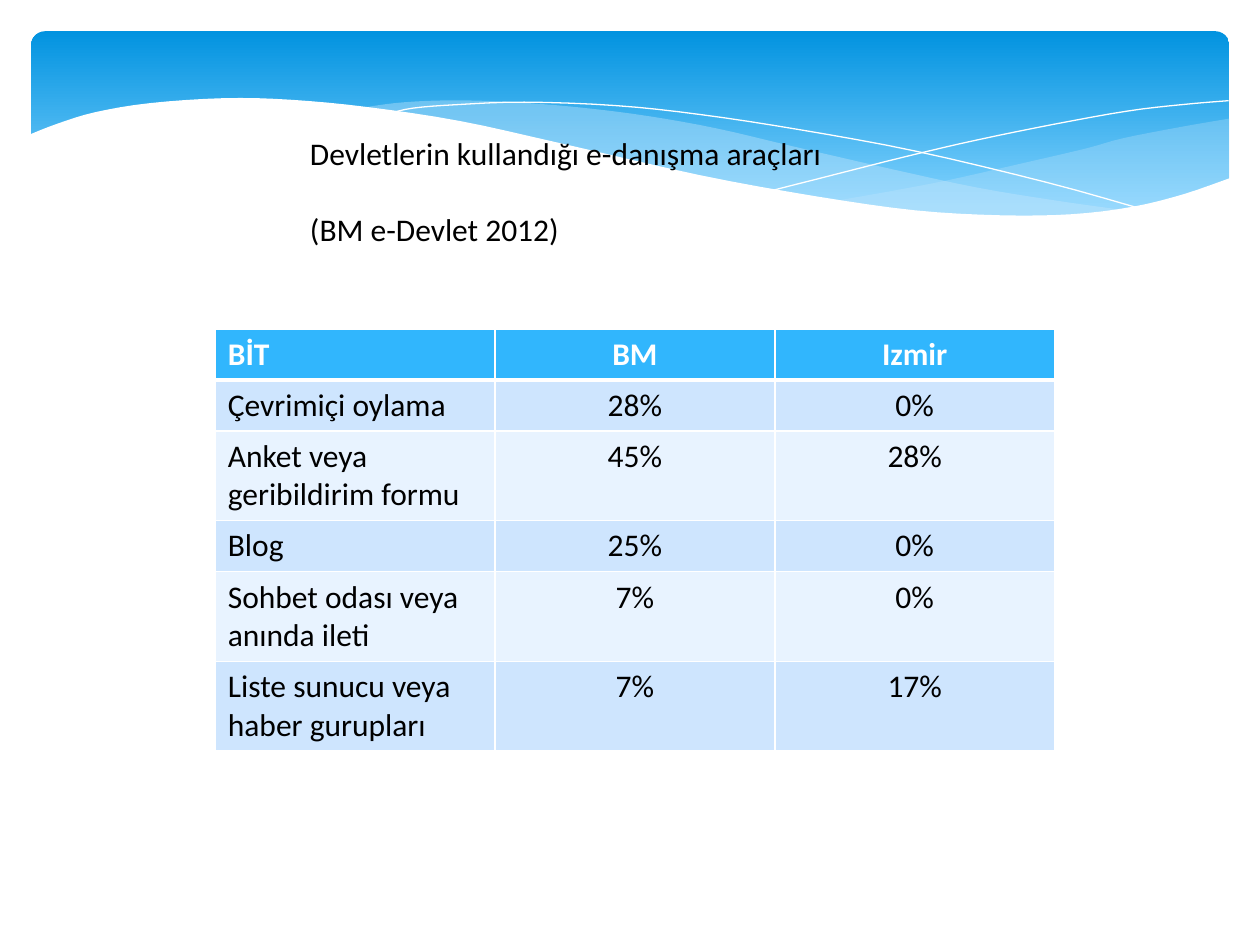
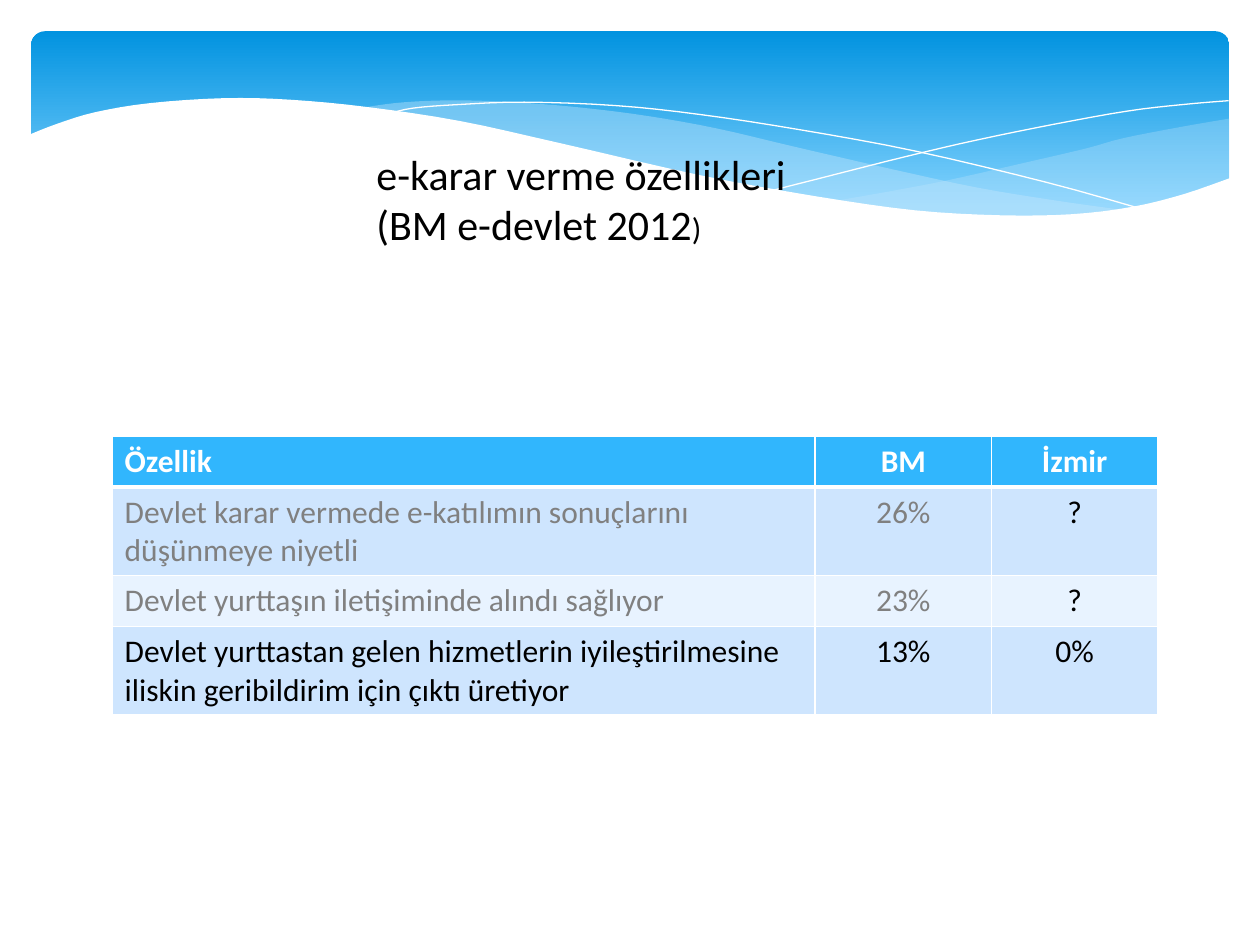
from lxml import etree
from pptx import Presentation
from pptx.dml.color import RGBColor
from pptx.enum import shapes, text
from pptx.oxml.ns import qn
from pptx.util import Cm, Pt

COLORS = {
    "sky_top": "0293E0", "sky_bottom": "83D3FE", "swell": "C6E7FC",
    "header": "31B6FD", "row_dark": "CEE5FE", "row_light": "E8F3FF",
    "white": "FFFFFF", "ink": "000000", "muted": "808080",
}
FONT = "Calibri"
ROW_HEIGHT = 1.03

# Wave curves, as points in cm; a wave with a fill joins its curves to an outline
RIGHT_TOP = [(24.79, 2.39), (23.75, 2.57), (22.63, 2.79), (21.87, 3), (20.45, 3.33),
             (19.13, 3.63), (17.93, 3.86), (16.79, 4.06)]
RIGHT_BOTTOM = [(16.79, 4.06), (17.91, 4.19), (19.23, 4.32), (20.4, 4.37), (21.44, 4.34),
                (22.38, 4.24), (23.19, 4.11), (23.93, 3.91), (24.79, 3.58)]
LEFT_TOP = [(22.68, 4.24), (21.26, 4.04), (19.69, 3.78), (17.93, 3.4), (15.98, 2.95),
            (14.45, 2.59), (13.06, 2.34), (11.81, 2.18), (10.67, 2.08), (9.65, 2.03),
            (8.74, 2.03), (7.95, 2.08), (7.26, 2.18)]
LEFT_BOTTOM = [(7.26, 2.18), (8.69, 2.39), (10.26, 2.69), (11.4, 2.95), (13.46, 3.43),
               (15.27, 3.81), (16.89, 4.09), (18.34, 4.27), (19.63, 4.37), (20.78, 4.39),
               (21.77, 4.34), (22.68, 4.24)]
FALLING = [(7.85, 2.29), (8.33, 2.18), (9.22, 2.11), (10.57, 2.06), (12.42, 2.13),
           (14.12, 2.31), (16.15, 2.62), (18.47, 3.05), (21.11, 3.68), (23.04, 4.22)]
RISING = [(15.57, 3.84), (16.59, 3.58), (18.29, 3.15), (19.71, 2.82), (21.23, 2.51),
          (22.73, 2.24), (23.83, 2.11), (24.77, 2.03)]
SHORE = [(24.82, 3.58), (23.88, 3.91), (22.83, 4.17), (21.59, 4.32), (20.14, 4.34),
         (18.44, 4.24), (16.46, 3.96), (14.1, 3.53), (11.35, 2.9), (9.27, 2.44),
         (7.42, 2.16), (5.84, 2.01), (4.5, 1.98), (3.02, 2.08), (1.93, 2.26),
         (1.17, 2.49), (0.58, 2.72)]
SHORE_BASE = [(0.58, 5.69), (24.82, 5.69)]

# Curves, fill and opacity in percent, from back to front
WAVES = [
    ([RIGHT_TOP, RIGHT_BOTTOM], "swell", 29),
    ([LEFT_TOP, LEFT_BOTTOM], "swell", 40),
    ([FALLING], None, 100),
    ([RISING], None, 100),
    ([SHORE, SHORE_BASE], "white", 100),
]

SLIDES = [
    {
        "title_box": (6, 2.57, 13.84, 2.57),
        "title": [[("Devletlerin kullandığı e-danışma araçları", 18)],
                  [("(BM e-Devlet 2012)", 18)]],
        "title_gap": 22,
        "table_at": (4.34, 6.63),
        "columns": [5.64, 5.64, 5.64],
        "rows": [
            ("BİT", "BM", "Izmir"),
            ("Çevrimiçi oylama", "28%", "0%"),
            ("Anket veya geribildirim formu", "45%", "28%"),
            ("Blog", "25%", "0%"),
            ("Sohbet odası veya anında ileti", "7%", "0%"),
            ("Liste sunucu veya haber gurupları", "7%", "17%"),
        ],
    },
    {
        "title_box": (7.34, 2.87, 12.9, 3.84),
        "title": [[("e-karar verme özellikleri", 24)],
                  [("(BM e-devlet 2012", 24), (")", 18)]],
        "title_gap": 0,
        "table_at": (2.26, 8.79),
        "columns": [14.17, 3.56, 3.35],
        "rows": [
            ("Özellik", "BM", "İzmir"),
            ("Devlet karar vermede e-katılımın sonuçlarını düşünmeye niyetli", "26%", "?"),
            ("Devlet yurttaşın iletişiminde alındı sağlıyor", "23%", "?"),
            ("Devlet yurttastan gelen hizmetlerin iyileştirilmesine iliskin "
             "geribildirim için çıktı üretiyor", "13%", "0%"),
        ],
    },
]


def smooth(points, steps=4):
    """Points of a Catmull-Rom curve, in EMU."""
    padded = [points[0], *points, points[-1]]
    curve = []
    for a, b, c, d in zip(padded, padded[1:], padded[2:], padded[3:]):
        for t in (step / steps for step in range(steps)):
            curve.append(tuple(Cm((2 * q + (r - p) * t + (2 * p - 5 * q + 4 * r - s) * t**2
                                   + (3 * q - p - 3 * r + s) * t**3) / 2)
                               for p, q, r, s in zip(a, b, c, d)))
    return curve + [tuple(Cm(v) for v in points[-1])]


def write(paragraph, words, size, color, bold=False):
    run = paragraph.add_run()
    run.text = words
    look = {"name": FONT, "size": Pt(size), "bold": bold}
    for key, value in look.items():
        setattr(run.font, key, value)
    run.font.color.rgb = RGBColor.from_string(COLORS[color])


deck = Presentation()
deck.slide_width, deck.slide_height = Cm(25.4), Cm(19.05)

for content in SLIDES:
    slide = deck.slides.add_slide(deck.slide_layouts[6])

    # Sky band
    sky = slide.shapes.add_shape(shapes.MSO_SHAPE.ROUNDED_RECTANGLE,
                                 Cm(0.63), Cm(0.63), Cm(24.15), Cm(3.96))
    sky.adjustments[0] = 0.07
    sky.shadow.inherit = False
    sky.line.fill.background()
    sky.fill.gradient()
    sky.fill.gradient_angle = 270
    for stop, color, position in zip(sky.fill.gradient_stops, ("sky_top", "sky_bottom"), (0, 0.9)):
        stop.color.rgb = RGBColor.from_string(COLORS[color])
        stop.position = position

    # Waves
    for curves, fill, opacity in WAVES:
        points = [point for curve in curves for point in smooth(curve)]
        builder = slide.shapes.build_freeform(*points[0], scale=1.0)
        builder.add_line_segments(points[1:], close=fill is not None)
        wave = builder.convert_to_shape()
        wave.shadow.inherit = False
        if fill is None:
            wave.fill.background()
            wave.line.color.rgb = RGBColor.from_string(COLORS["white"])
            wave.line.width = Pt(0)
            continue
        wave.line.fill.background()
        wave.fill.solid()
        wave.fill.fore_color.rgb = RGBColor.from_string(COLORS[fill])
        if opacity < 100:
            tint = wave.fill._xPr.find(qn("a:solidFill"))[0]
            etree.SubElement(tint, qn("a:alpha"), val=str(opacity * 1000))

    # Table
    rows, columns = content["rows"], content["columns"]
    table = slide.shapes.add_table(
        len(rows), len(columns), *(Cm(v) for v in content["table_at"]),
        Cm(sum(columns)), Cm(ROW_HEIGHT * len(rows))).table
    table.first_row = table.horz_banding = False
    for column, width in zip(table.columns, columns):
        column.width = Cm(width)
    for r, row in enumerate(rows):
        fill = "header" if r == 0 else ("row_light", "row_dark")[r % 2]
        borders = {"L": 1, "R": 1, "T": 3 if r == 1 else 1, "B": 3 if r == 0 else 1}
        for c, words in enumerate(row):
            cell = table.cell(r, c)
            for side, width in borders.items():
                border = etree.SubElement(cell._tc.get_or_add_tcPr(), qn(f"a:ln{side}"),
                                          w=str(Pt(width)))
                paint = etree.SubElement(border, qn("a:solidFill"))
                etree.SubElement(paint, qn("a:srgbClr"), val=COLORS["white"])
            cell.fill.solid()
            cell.fill.fore_color.rgb = RGBColor.from_string(COLORS[fill])
            paragraph = cell.text_frame.paragraphs[0]
            if c > 0:
                paragraph.alignment = text.PP_ALIGN.CENTER
            unanswered = row[-1] == "?" and c < len(row) - 1
            color = "white" if r == 0 else "muted" if unanswered else "ink"
            write(paragraph, words, 18, color, bold=r == 0)

    # Title
    title = slide.shapes.add_textbox(*(Cm(v) for v in content["title_box"])).text_frame
    title.word_wrap = True
    title.auto_size = text.MSO_AUTO_SIZE.SHAPE_TO_FIT_TEXT
    for i, line in enumerate(content["title"]):
        paragraph = title.add_paragraph() if i else title.paragraphs[0]
        if i:
            paragraph.space_before = Pt(content["title_gap"])
        for words, size in line:
            write(paragraph, words, size, "ink")

deck.save("out.pptx")
